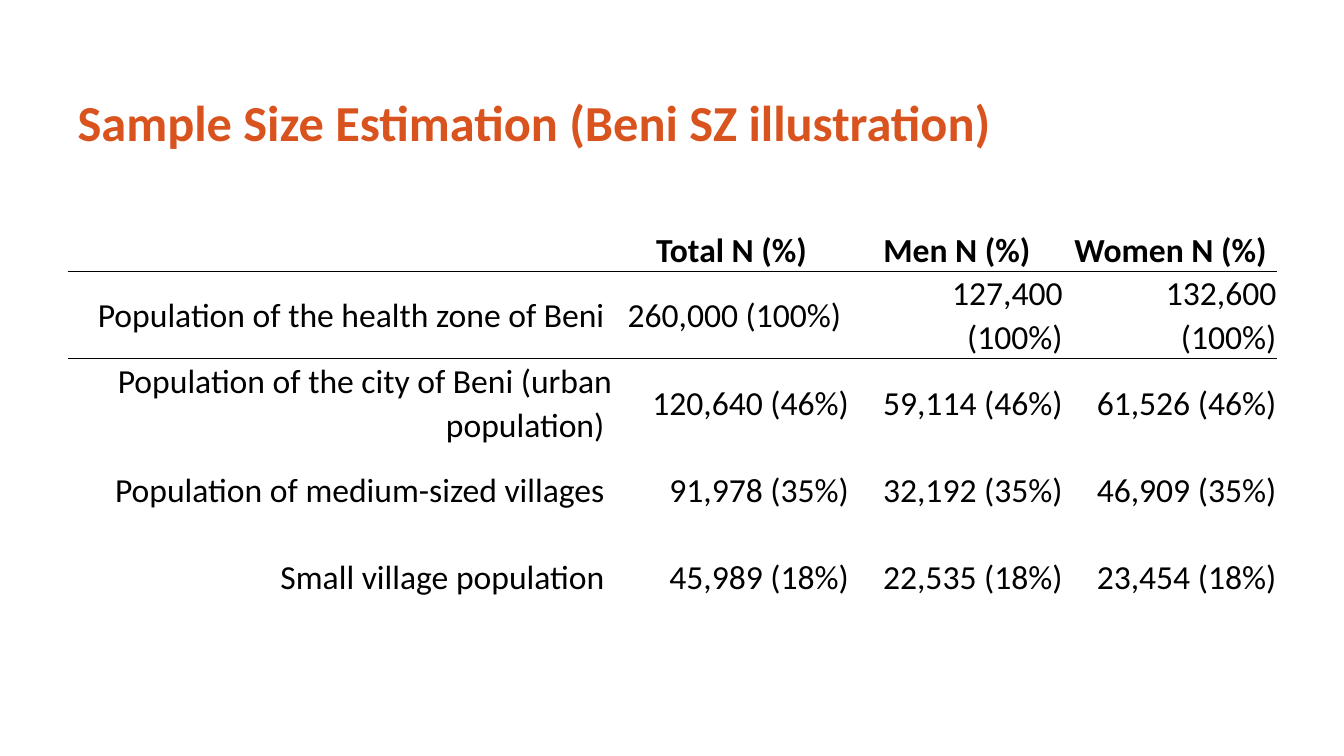
from dataclasses import dataclass

import pptx
import pptx.dml.color
import pptx.enum.text
import pptx.oxml
import pptx.oxml.ns
import pptx.table
import pptx.text.text
import pptx.util
from pptx.dml.color import RGBColor
from pptx.util import Inches

ORANGE = RGBColor(0xD9, 0x53, 0x1E)
BLACK = RGBColor(0x00, 0x00, 0x00)
FONT_NAME = "Calibri"
PLAIN_TABLE_STYLE = "{2D5ABB26-0587-4C30-8999-92F81FD0307C}"

ALIGN = pptx.enum.text.PP_ALIGN
ANCHOR = pptx.enum.text.MSO_ANCHOR

COLUMN_WIDTHS = (5.41, 2.35, 2.12, 2.12)
ROW_HEIGHT = 0.86


@dataclass(frozen=True)
class PopulationRow:
    label: str
    total: str
    men: str
    women: str

    def texts(self) -> tuple[str, ...]:
        return self.label, self.total, self.men, self.women


ROWS = (
    PopulationRow("", "Total N (%)", "Men N (%)", "Women N (%)"),
    PopulationRow("Population of the health zone of Beni ",
                  "260,000 (100%) ", "127,400 (100%)", "132,600 (100%)"),
    PopulationRow("Population of the city of Beni (urban population) ",
                  "120,640 (46%)", "59,114 (46%)", "61,526 (46%)"),
    PopulationRow("Population of medium-sized villages ",
                  "91,978 (35%)", "32,192 (35%)", "46,909 (35%)"),
    PopulationRow("Small village population ",
                  "45,989 (18%)", "22,535 (18%)", "23,454 (18%)"),
)


def format_font(font: pptx.text.text.Font, size: int, color: RGBColor, bold: bool) -> None:
    font.name = FONT_NAME
    font.size = pptx.util.Pt(size)
    font.bold = bold
    font.color.rgb = color


def add_border(cell: pptx.table._Cell, side: str) -> None:
    """Draw a 1 pt border; side is lnT (top) or lnB (bottom)."""
    border = pptx.oxml.parse_xml(
        f'<a:{side} {pptx.oxml.ns.nsdecls("a")} w="{pptx.util.Pt(1)}">'
        f'<a:solidFill><a:srgbClr val="{BLACK}"/></a:solidFill></a:{side}>'
    )
    cell._tc.get_or_add_tcPr().insert(0, border)


def fill_cell(cell: pptx.table._Cell, text: str, is_header: bool) -> None:
    cell.margin_left = cell.margin_right = Inches(0.01)
    cell.margin_top = cell.margin_bottom = 0
    cell.vertical_anchor = ANCHOR.BOTTOM if is_header else ANCHOR.MIDDLE
    cell.fill.background()
    paragraph = cell.text_frame.paragraphs[0]
    paragraph.text = text
    paragraph.alignment = ALIGN.CENTER if is_header else ALIGN.RIGHT
    paragraph.line_spacing = 1.07
    paragraph.space_after = pptx.util.Pt(8)
    for run in paragraph.runs:
        format_font(run.font, 24, BLACK, is_header)


def main() -> None:
    presentation = pptx.Presentation()
    presentation.slide_width = Inches(13.33)
    presentation.slide_height = Inches(7.5)
    slide = presentation.slides.add_slide(presentation.slide_layouts[5])

    # Title
    title = slide.shapes.title
    title.left, title.top = Inches(0.67), Inches(0.3)
    title.width, title.height = Inches(12), Inches(1.25)
    title.text_frame.text = "Sample Size Estimation (Beni SZ illustration)"
    title.text_frame.auto_size = pptx.enum.text.MSO_AUTO_SIZE.NONE
    title.text_frame.vertical_anchor = ANCHOR.BOTTOM
    paragraph = title.text_frame.paragraphs[0]
    paragraph.alignment = ALIGN.LEFT
    paragraph.line_spacing = pptx.util.Pt(40)
    format_font(paragraph.runs[0].font, 36, ORANGE, True)

    # Population table
    table = slide.shapes.add_table(
        len(ROWS), len(COLUMN_WIDTHS), Inches(0.67), Inches(1.83),
        Inches(sum(COLUMN_WIDTHS)), Inches(ROW_HEIGHT * len(ROWS)),
    ).table
    table.horz_banding = False
    style = table._tbl.tblPr.find(pptx.oxml.ns.qn("a:tableStyleId"))
    style.text = PLAIN_TABLE_STYLE
    for column, width in zip(table.columns, COLUMN_WIDTHS):
        column.width = Inches(width)
    for row_index, row in enumerate(ROWS):
        table.rows[row_index].height = Inches(ROW_HEIGHT)
        for column_index, text in enumerate(row.texts()):
            fill_cell(table.cell(row_index, column_index), text, row_index == 0)

    # Rule between the header and the figures
    for column_index in range(len(COLUMN_WIDTHS)):
        add_border(table.cell(0, column_index), "lnB")
        add_border(table.cell(1, column_index), "lnT")

    presentation.save("out.pptx")


if __name__ == "__main__":
    main()
